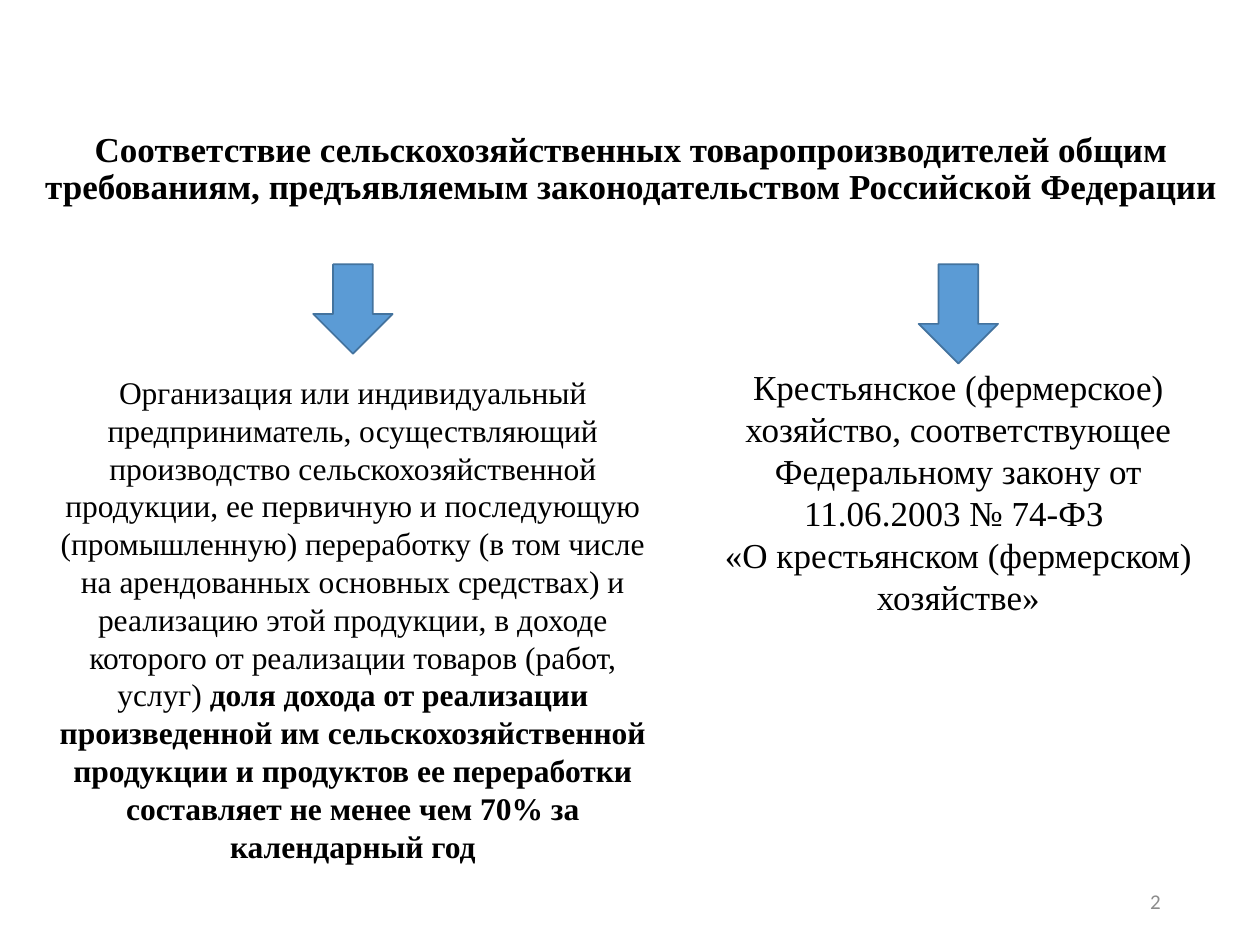
from dataclasses import dataclass

from pptx import Presentation
from pptx.dml.color import RGBColor
from pptx.enum.shapes import MSO_SHAPE
from pptx.enum.text import MSO_ANCHOR, MSO_AUTO_SIZE, PP_ALIGN
from pptx.slide import Slide
from pptx.text.text import TextFrame
from pptx.util import Cm, Pt

DOWN_ARROW = MSO_SHAPE.DOWN_ARROW
BOTTOM, MIDDLE = MSO_ANCHOR.BOTTOM, MSO_ANCHOR.MIDDLE
CENTER, RIGHT = PP_ALIGN.CENTER, PP_ALIGN.RIGHT
NO_AUTOFIT = MSO_AUTO_SIZE.NONE

COLORS = {
    "text": "000000",
    "page_number": "8C8C8C",
    "arrow": "5B9BD5",
    "arrow_line": "43739E",
}
SERIF, SANS = "Times New Roman", "Calibri"
ARROW_TOP, ARROW_WIDTH = 5.33, 1.6


@dataclass
class Box:
    left: float
    top: float
    width: float
    height: float

    def lengths(self) -> tuple:
        return Cm(self.left), Cm(self.top), Cm(self.width), Cm(self.height)


@dataclass
class Requirement:
    box: Box
    arrow_height: float
    size: int
    wording: str
    emphasis: str = ""


TITLE = (
    "Соответствие сельскохозяйственных товаропроизводителей общим "
    "требованиям, предъявляемым законодательством Российской Федерации"
)
REQUIREMENTS = [
    Requirement(
        Box(0.84, 7.59, 12.55, 9.96), 1.8, 18,
        "Организация или индивидуальный предприниматель, осуществляющий "
        "производство сельскохозяйственной продукции, ее первичную и "
        "последующую (промышленную) переработку (в том числе на арендованных "
        "основных средствах) и реализацию этой продукции, в доходе которого "
        "от реализации товаров (работ, услуг) ",
        "доля дохода от реализации произведенной им сельскохозяйственной "
        "продукции и продуктов ее переработки составляет не менее чем 70% "
        "за календарный год",
    ),
    Requirement(
        Box(13.72, 6.91, 11.2, 5.66), 2, 20,
        "Крестьянское (фермерское) хозяйство, соответствующее Федеральному "
        "закону от 11.06.2003 № 74-ФЗ \n"
        "«О крестьянском (фермерском) хозяйстве»",
    ),
]


def color(key: str) -> RGBColor:
    return RGBColor.from_string(COLORS[key])


def write(frame: TextFrame, wording: str, size: int, emphasis: str = "",
          font: str = SERIF, ink: str = "text", align=CENTER, anchor=BOTTOM) -> None:
    frame.word_wrap = True
    frame.auto_size = NO_AUTOFIT
    frame.vertical_anchor = anchor
    paragraph = frame.paragraphs[0]
    paragraph.text = wording
    paragraph.alignment = align
    if emphasis:
        strong = paragraph.add_run()
        strong.text = emphasis
        strong.font.bold = True
    for run in paragraph.runs:
        run.font.name = font
        run.font.size = Pt(size)
        run.font.color.rgb = color(ink)


def draw_title(slide: Slide, box: Box) -> None:
    title = slide.shapes.title
    title.left, title.top, title.width, title.height = box.lengths()
    write(title.text_frame, TITLE, 20)
    heading = title.text_frame.paragraphs[0]
    heading.line_spacing = 0.9
    heading.runs[0].font.bold = True


def draw_requirement(slide: Slide, requirement: Requirement) -> None:
    box = requirement.box
    arrow_box = Box(box.left + (box.width - ARROW_WIDTH) / 2, ARROW_TOP,
                    ARROW_WIDTH, requirement.arrow_height)
    arrow = slide.shapes.add_shape(DOWN_ARROW, *arrow_box.lengths())
    arrow.shadow.inherit = False
    arrow.fill.solid()
    arrow.fill.fore_color.rgb = color("arrow")
    arrow.line.color.rgb = color("arrow_line")
    arrow.line.width = Pt(1)
    description = slide.shapes.add_textbox(*box.lengths())
    write(description.text_frame, requirement.wording, requirement.size,
          requirement.emphasis)


def main() -> None:
    deck = Presentation()
    deck.slide_width, deck.slide_height = Cm(25.4), Cm(19.05)
    slide = deck.slides.add_slide(deck.slide_layouts.get_by_name("Title Only"))
    draw_title(slide, Box(0.51, 2.51, 24.43, 1.8))
    for requirement in REQUIREMENTS:
        draw_requirement(slide, requirement)
    page_number = slide.shapes.add_textbox(*Box(17.93, 17.65, 5.72, 1.02).lengths())
    write(page_number.text_frame, "2", 12, font=SANS, ink="page_number",
          align=RIGHT, anchor=MIDDLE)
    deck.save("out.pptx")


if __name__ == "__main__":
    main()
